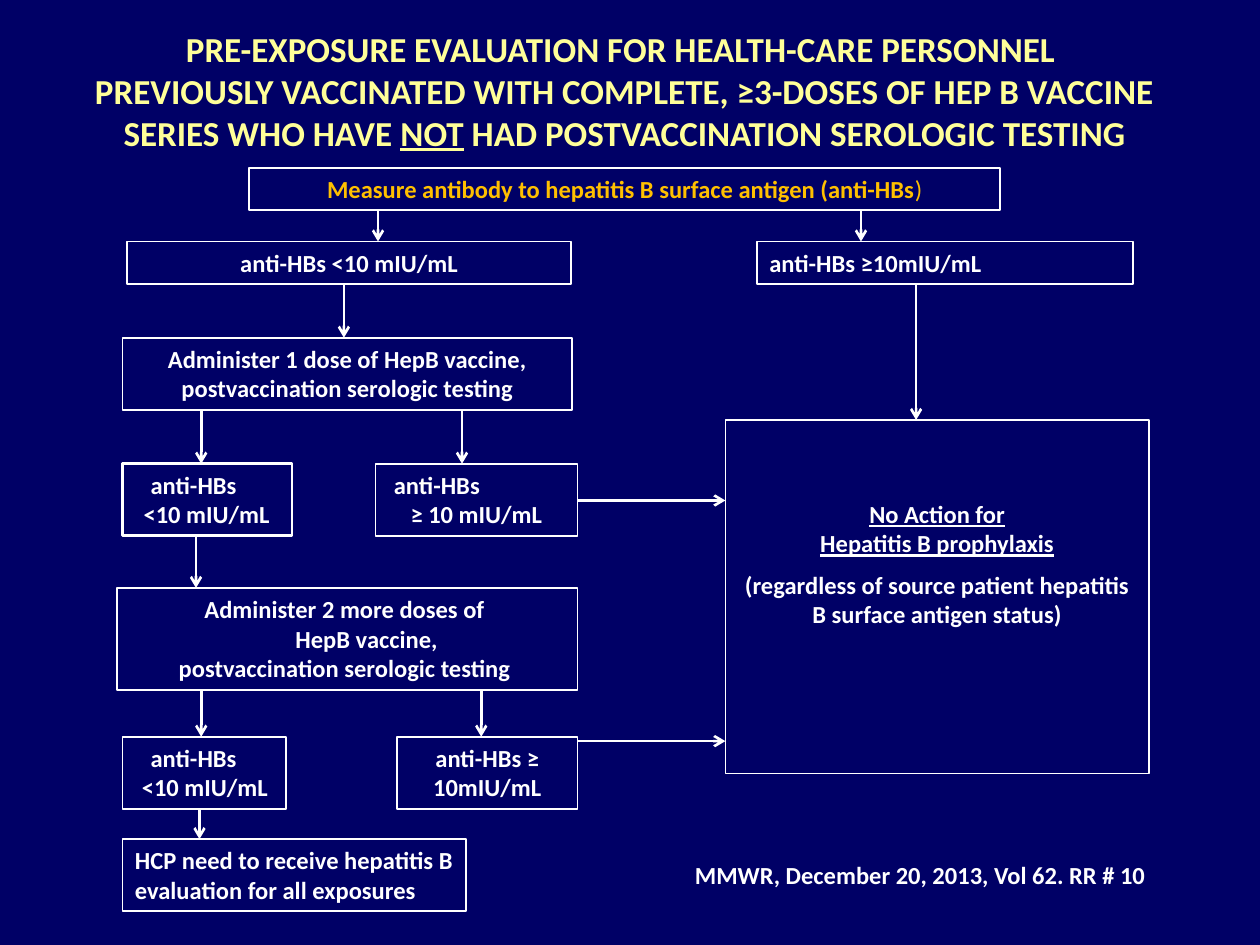
import pptx
import pptx.util
import pptx.dml.color
import pptx.enum.shapes
import pptx.enum.text
import pptx.oxml.ns
from lxml import etree

Pt = pptx.util.Pt
LEFT = pptx.enum.text.PP_ALIGN.LEFT
CENTER = pptx.enum.text.PP_ALIGN.CENTER

COLORS = {"background": "000066", "title": "FFFF99", "measure": "FFC000", "white": "FFFFFF"}

# Content: a line is a string, or a list of (text, font overrides)
TITLE = [
    "PRE-EXPOSURE EVALUATION FOR HEALTH-CARE PERSONNEL ",
    "PREVIOUSLY VACCINATED WITH COMPLETE, ≥3-DOSES OF HEP B VACCINE",
    [("SERIES WHO HAVE ", {}), ("NOT", {"underline": True}),
     (" HAD POSTVACCINATION SEROLOGIC TESTING", {})],
]
CITATION = ["MMWR, December 20, 2013, Vol 62. RR # 10"]

# Steps: left, top, width, rows of text, lines, options
STEPS = {
    "measure": (142.5, 96, 429, 1,
                [[("Measure antibody to hepatitis B surface antigen (anti-HBs", {}),
                  (")", {"bold": False})]], {"color": "measure"}),
    "low": (72.5, 138, 254, 1, ["anti-HBs <10 mIU/mL"], {}),
    "high": (432.5, 138, 215, 1, ["anti-HBs ≥10mIU/mL"], {"align": LEFT}),
    "one dose": (70, 193, 257, 2,
                 ["Administer 1 dose of HepB vaccine,", "postvaccination serologic testing"], {}),
    "low after one": (70, 265, 97, 2, ["anti-HBs", "<10 mIU/mL"],
                      {"align": LEFT, "indents": [9, 5], "border": 1.5}),
    "high after one": (214.5, 265, 115.5, 2, ["anti-HBs", "≥ 10 mIU/mL"],
                       {"align": LEFT, "indents": [3.5, 13]}),
    "two doses": (67, 336, 263, 3,
                  ["Administer 2 more doses of ", "HepB vaccine,",
                   "postvaccination serologic testing "], {"indents": [0, 22, 0]}),
    "low after three": (70, 421, 93.5, 2, ["anti-HBs", "<10 mIU/mL"],
                        {"align": LEFT, "indents": [9, 4]}),
    "high after three": (227, 421, 103, 2, ["anti-HBs ≥ 10mIU/mL"], {}),
    "evaluate": (70, 479.5, 196.5, 2,
                 ["HCP need to receive hepatitis B evaluation for all exposures"], {"align": LEFT}),
    "no action": (414.5, 240, 242, 1,
                  [[("No Action for", {"underline": True})],
                   [("Hepatitis B prophylaxis", {"underline": True})],
                   "(regardless of source patient hepatitis B surface antigen status)"],
                  {"height": 202, "top_inset": 45, "gaps": [0, 0, 7]}),
}

# Arrows: from step, to step, x of a downward arrow or y of a sideways one
DOWN = [
    ("measure", "low", 216), ("measure", "high", 492),
    ("low", "one dose", 196.5), ("high", "no action", 523.5),
    ("one dose", "low after one", 115), ("one dose", "high after one", 264),
    ("low after one", "two doses", 112),
    ("two doses", "low after three", 115), ("two doses", "high after three", 275),
    ("low after three", "evaluate", 114),
]
ACROSS = [("high after one", "no action", 286), ("high after three", "no action", 423.5)]

ROW_HEIGHT, ROW_PADDING = 17, 7.2


def rgb(name):
    return pptx.dml.color.RGBColor.from_string(COLORS[name])


def write(frame, lines, size=14, color="white", align=CENTER, indents=None, gaps=None):
    frame.word_wrap = True
    frame.vertical_anchor = pptx.enum.text.MSO_ANCHOR.TOP
    for i, line in enumerate(lines):
        paragraph = frame.add_paragraph() if i else frame.paragraphs[0]
        paragraph.alignment = align
        paragraph.font.name = "Calibri"
        paragraph.font.size = Pt(size)
        paragraph.font.bold = True
        paragraph.font.color.rgb = rgb(color)
        if gaps:
            paragraph.space_before = Pt(gaps[i])
        if indents:
            paragraph._p.get_or_add_pPr().set("marL", str(Pt(indents[i])))
        for text, overrides in [(line, {})] if isinstance(line, str) else line:
            run = paragraph.add_run()
            run.text = text
            for name, value in overrides.items():
                setattr(run.font, name, value)


def add_step(slide, left, top, width, rows, lines, options):
    options = dict(options)
    height = options.pop("height", ROW_PADDING + ROW_HEIGHT * rows)
    border = options.pop("border", 1)
    top_inset = options.pop("top_inset", 3.6)
    step = slide.shapes.add_shape(pptx.enum.shapes.MSO_SHAPE.RECTANGLE,
                                  Pt(left), Pt(top), Pt(width), Pt(height))
    step.shadow.inherit = False
    step.fill.background()
    step.line.color.rgb = rgb("white")
    step.line.width = Pt(border)
    step.text_frame.margin_top = Pt(top_inset)
    write(step.text_frame, lines, **options)
    return step


def add_arrow(slide, x1, y1, x2, y2):
    arrow = slide.shapes.add_connector(pptx.enum.shapes.MSO_CONNECTOR.STRAIGHT, x1, y1, x2, y2)
    arrow.line.color.rgb = rgb("white")
    arrow.line.width = Pt(1.5)
    qn = pptx.oxml.ns.qn
    etree.SubElement(arrow.line._get_or_add_ln(), qn("a:tailEnd"), type="arrow")
    etree.SubElement(arrow._element.spPr, qn("a:effectLst"))


def main():
    deck = pptx.Presentation()
    deck.slide_width, deck.slide_height = Pt(720), Pt(540)
    slide = deck.slides.add_slide(deck.slide_layouts[6])
    slide.background.fill.solid()
    slide.background.fill.fore_color.rgb = rgb("background")

    # Title and citation
    title = slide.shapes.add_textbox(Pt(12), Pt(12), Pt(690), Pt(80))
    write(title.text_frame, TITLE, size=20, color="title")
    citation = slide.shapes.add_textbox(Pt(390), Pt(488), Pt(294), Pt(24.2))
    write(citation.text_frame, CITATION, align=LEFT)

    # Flowchart
    steps = {name: add_step(slide, *step) for name, step in STEPS.items()}
    for start, end, x in DOWN:
        add_arrow(slide, Pt(x), steps[start].top + steps[start].height, Pt(x), steps[end].top)
    for start, end, y in ACROSS:
        add_arrow(slide, steps[start].left + steps[start].width, Pt(y), steps[end].left, Pt(y))

    deck.save("out.pptx")


if __name__ == "__main__":
    main()
